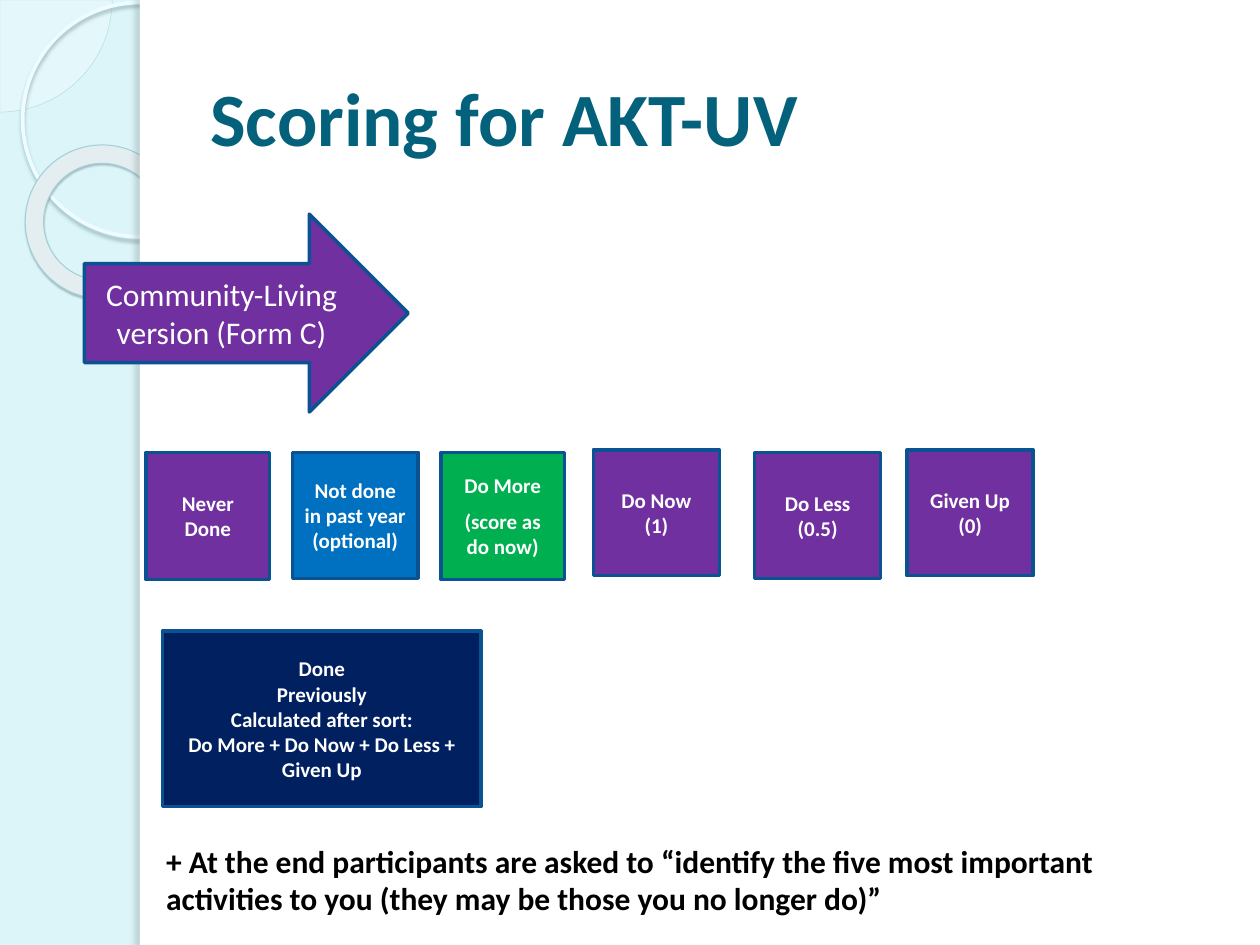
import pptx
import pptx.util
import pptx.oxml.ns
import pptx.dml.color
import pptx.enum.shapes
import pptx.enum.text
from lxml import etree

Inches = pptx.util.Inches
Pt = pptx.util.Pt
RGB = pptx.dml.color.RGBColor
Kind = pptx.enum.shapes.MSO_SHAPE
Align = pptx.enum.text.PP_ALIGN
Anchor = pptx.enum.text.MSO_ANCHOR
qn = pptx.oxml.ns.qn

FONT = "Calibri"
ICE = RGB(0xDB, 0xF5, 0xF9)
PALE = RGB(0xF8, 0xFE, 0xFF)
RIM = RGB(0xAF, 0xDB, 0xE2)
GLOW = RGB(0xED, 0xFC, 0xFF)
MIST = RGB(0xE4, 0xEE, 0xF0)
EDGE = RGB(0xA1, 0xCF, 0xD6)
WHITE = RGB(0xFF, 0xFF, 0xFF)
BLACK = RGB(0, 0, 0)
TEAL = RGB(0x04, 0x61, 0x7B)
BORDER = RGB(0x0B, 0x52, 0x92)
PURPLE = RGB(0x70, 0x30, 0xA0)
BLUE = RGB(0x00, 0x70, 0xC0)
GREEN = RGB(0x00, 0xB0, 0x50)
NAVY = RGB(0x00, 0x20, 0x60)


def inch(box):
    """Turn a box of numbers into lengths."""
    return [Inches(side) for side in box]


def add_form(slide, kind, box, fill=None, line=None, width=1):
    """Add a flat shape with the given fill and line."""
    form = slide.shapes.add_shape(kind, *inch(box))
    form.shadow.inherit = False
    if fill is None:
        form.fill.background()
    else:
        form.fill.solid()
        form.fill.fore_color.rgb = fill
    if line is None:
        form.line.fill.background()
    else:
        form.line.color.rgb = line
        form.line.width = Pt(width)
    return form


def set_alpha(node, part):
    """Give a colour node an opacity in percent."""
    etree.SubElement(node, qn("a:alpha"), val=str(part * 1000))


def cast_shade(form, tint, part, blur, dist, angle):
    """Give a shape an outer shadow."""
    list_node = form.element.spPr.find(qn("a:effectLst"))
    shade = etree.SubElement(
        list_node, qn("a:outerShdw"), blurRad=str(Pt(blur)), dist=str(Pt(dist)),
        dir=str(angle * 60000), algn="ctr", rotWithShape="0")
    set_alpha(etree.SubElement(shade, qn("a:srgbClr"), val=tint), part)


def write(frame, lines, size, color, bold=True, align=Align.CENTER, gap=0):
    """Fill a text frame with one paragraph per line."""
    frame.word_wrap = True
    for index, line in enumerate(lines):
        para = frame.add_paragraph() if index else frame.paragraphs[0]
        para.alignment = align
        para.space_before = Pt(gap)
        run = para.add_run()
        run.text = line
        run.font.name = FONT
        run.font.size = Pt(size)
        run.font.bold = bold
        run.font.color.rgb = color


def draw_side(slide, box):
    """Draw the side band with its rings and the white page beside it."""
    left, top, width, height = box
    rad = 0.89
    pie = add_form(slide, Kind.PIE, (left - rad, top - rad, 2 * rad, 2 * rad),
                   PALE, RIM, 0.25)
    pie.adjustments[0] = 0
    pie.adjustments[1] = 54
    set_alpha(pie.element.spPr.find(".//" + qn("a:srgbClr")), 33)
    ring = add_form(slide, Kind.OVAL, (left + 0.18, top + 0.02, 1.86, 1.86),
                    None, GLOW, 2.15)
    cast_shade(ring, "9CB9BE", 85, 2, 2, 90)
    donut = add_form(slide, Kind.DONUT, (left + 0.2, top + 1.15, 1.22, 1.22),
                     MIST, EDGE, 0.58)
    donut.adjustments[0] = 0.12
    cast_shade(donut, "4B5E61", 35, 1, 1.2, 75)
    edge = left + width
    add_form(slide, Kind.RECTANGLE, (edge, top, 10 - edge, height), WHITE)
    strip = add_form(slide, Kind.RECTANGLE, (edge, top, 0.08, height), WHITE)
    cast_shade(strip, "6C7A7C", 25, 3, 3, 180)


def place_title(slide, box, text):
    """Place the title in front of the side band."""
    title = slide.shapes.title
    title.left, title.top, title.width, title.height = inch(box)
    title.element.getparent().append(title.element)
    title.text_frame.vertical_anchor = Anchor.MIDDLE
    write(title.text_frame, [text], 43, TEAL, align=Align.LEFT)


def draw_card(slide, box, fill, lines, gap=0, kind=Kind.RECTANGLE, size=12, bold=True):
    """Draw a bordered shape with centred white text."""
    card = add_form(slide, kind, box, fill, BORDER, 2)
    card.text_frame.vertical_anchor = Anchor.MIDDLE
    write(card.text_frame, lines, size, WHITE, bold, gap=gap)


def draw_scores(slide, box):
    """Draw the row of score cards."""
    left, top = box[:2]
    cards = [
        (0, 0.02, 0.98, 1.01, PURPLE, ["Never Done"], 6),
        (1.16, 0.02, 1, 1, BLUE, ["Not done in past year", "(optional)"], 0),
        (2.34, 0.02, 0.98, 1.01, GREEN, ["Do More", "(score as do now)"], 6),
        (3.55, 0, 1, 1, PURPLE, ["Do Now", "(1)"], 0),
        (4.83, 0.02, 1, 1, PURPLE, ["Do Less", "(0.5)"], 0),
        (6.04, 0, 1, 1, PURPLE, ["Given Up", "(0)"], 0),
    ]
    for right, down, width, height, fill, lines, gap in cards:
        draw_card(slide, (left + right, top + down, width, height), fill, lines, gap)


def place_note(slide, box, text):
    """Place the closing note."""
    note = slide.shapes.add_textbox(*inch(box))
    write(note.text_frame, [text], 18, BLACK, align=Align.LEFT)


def main():
    """Build and save the slide."""
    deck = pptx.Presentation()
    deck.slide_width, deck.slide_height = Inches(10), Inches(7.5)
    slide = deck.slides.add_slide(deck.slide_layouts[5])
    slide.background.fill.solid()
    slide.background.fill.fore_color.rgb = ICE
    draw_side(slide, (0, 0, 1.11, 7.5))
    place_title(slide, (1.57, 0.3, 8.2, 1.25), "Scoring for AKT-UV")
    draw_card(slide, (0.67, 1.7, 2.57, 1.57), PURPLE,
              ["Community-Living version (Form C)"],
              kind=Kind.RIGHT_ARROW, size=18, bold=False)
    draw_scores(slide, (1.16, 3.57, 7.04, 1.03))
    draw_card(slide, (1.29, 5.01, 2.53, 1.39), NAVY,
              ["Done", "Previously", "Calculated after sort:",
               "Do More + Do Now + Do Less + Given Up"])
    place_note(slide, (1.22, 6.63, 8.13, 0.71),
               "+ At the end participants are asked to “identify the five most important "
               "activities to you (they may be those you no longer do)”")
    deck.save("out.pptx")


if __name__ == "__main__":
    main()
